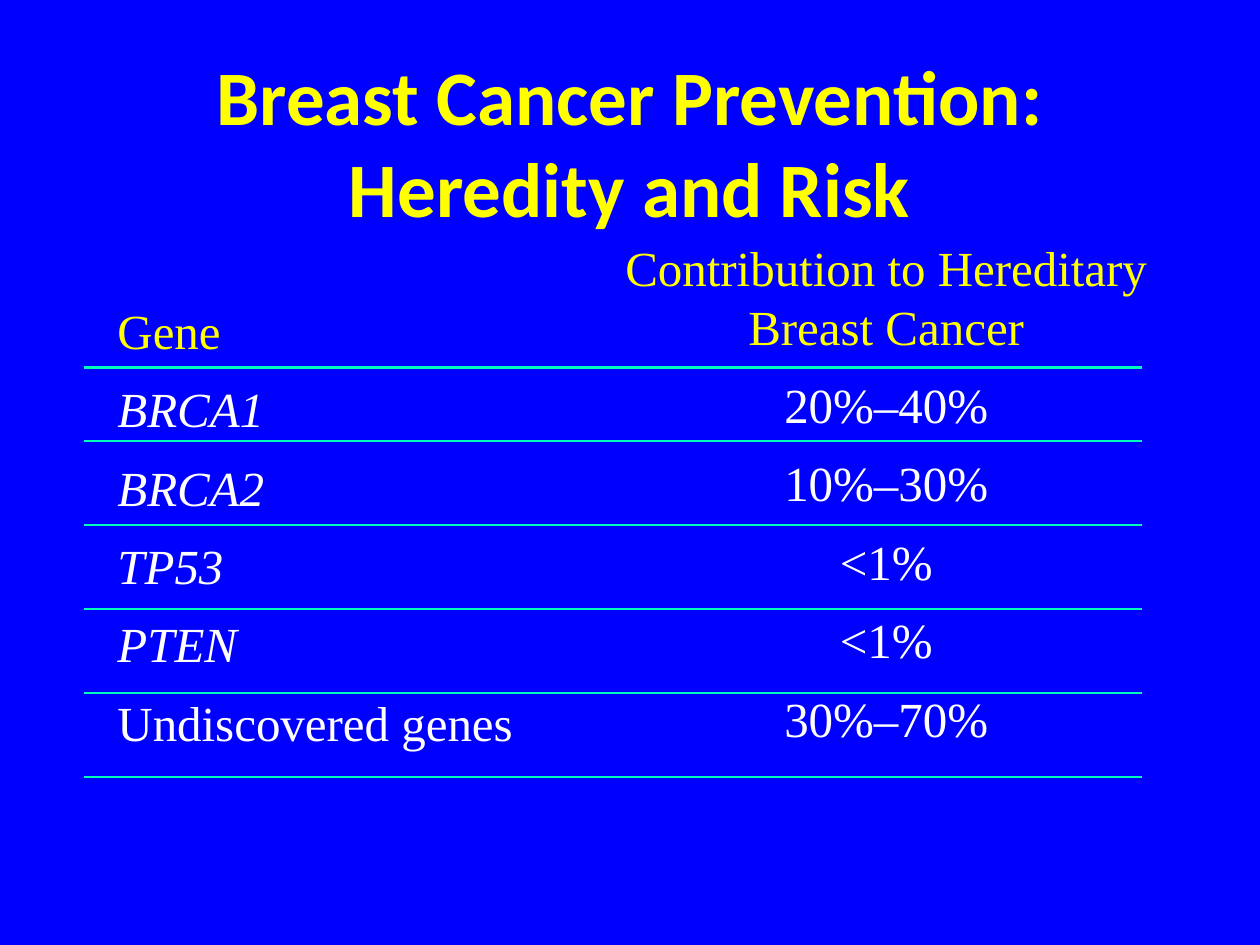
import pptx
import pptx.dml.color
import pptx.enum.shapes
import pptx.enum.text
import pptx.oxml
import pptx.oxml.ns
import pptx.util

BLUE = pptx.dml.color.RGBColor(0x00, 0x00, 0xFF)
YELLOW = pptx.dml.color.RGBColor(0xFF, 0xFF, 0x00)
WHITE = pptx.dml.color.RGBColor(0xFF, 0xFF, 0xFF)
MINT = pptx.dml.color.RGBColor(0x00, 0xFC, 0xBA)

ALIGN = pptx.enum.text.PP_ALIGN
FIT = pptx.enum.text.MSO_AUTO_SIZE
DRAWING = pptx.oxml.ns.nsdecls("a")

GENES = [
    ("BRCA1", "20%–40%", True),
    ("BRCA2", "10%–30%", True),
    ("TP53", "<1%", True),
    ("PTEN", "<1%", True),
    ("Undiscovered genes", "30%–70%", False),
]
RULE_ROWS = [17.5, *range(21, 38, 4)]


class SlideBuilder:
    """Places elements on a grid of 60 columns by 45 rows."""

    columns, rows = 60, 45
    title_font = {"name": "Calibri", "size": pptx.util.Pt(44), "bold": True}
    table_font = {"name": "Times New Roman", "size": pptx.util.Pt(28)}

    def __init__(self, deck):
        self.cell_width = deck.slide_width / self.columns
        self.cell_height = deck.slide_height / self.rows
        self.slide = deck.slides.add_slide(deck.slide_layouts[6])
        fill = self.slide.background.fill
        fill.solid()
        fill.fore_color.rgb = BLUE

    def across(self, columns):
        return round(columns * self.cell_width)

    def down(self, rows):
        return round(rows * self.cell_height)

    def text(self, left, top, width, height, lines, font, align=ALIGN.LEFT,
             wrap=True, fit=FIT.NONE, space_before=0):
        """Lines are (text, colour, italic); space_before is a percentage of a line."""
        box = self.slide.shapes.add_textbox(
            self.across(left), self.down(top), self.across(width), self.down(height))
        frame = box.text_frame
        frame.word_wrap = wrap
        frame.auto_size = fit
        for index, (words, colour, italic) in enumerate(lines):
            para = frame.add_paragraph() if index else frame.paragraphs[0]
            para.alignment = align
            if space_before:
                para._p.get_or_add_pPr().insert(0, pptx.oxml.parse_xml(
                    f'<a:spcBef {DRAWING}><a:spcPct val="{space_before * 1000}"/></a:spcBef>'))
            span = para.add_run()
            span.text = words
            for name, value in {**font, "italic": italic}.items():
                setattr(span.font, name, value)
            span.font.color.rgb = colour

    def rule(self, left, right, row):
        line = self.slide.shapes.add_connector(
            pptx.enum.shapes.MSO_CONNECTOR.STRAIGHT,
            self.across(left), self.down(row), self.across(right), self.down(row))
        line.line.color.rgb = MINT
        line.line.width = pptx.util.Pt(1.5)
        line._element.spPr.append(pptx.oxml.parse_xml(f"<a:effectLst {DRAWING}/>"))


def main():
    deck = pptx.Presentation()
    deck.slide_width = pptx.util.Inches(10)
    deck.slide_height = pptx.util.Inches(7.5)
    builder = SlideBuilder(deck)

    builder.text(4.5, 2, 51, 7.5,
                 [("Breast Cancer Prevention: Heredity and Risk", YELLOW, False)],
                 builder.title_font, ALIGN.CENTER)

    gene_lines = [("Gene", YELLOW, False)]
    share_lines = [("Contribution to Hereditary Breast Cancer", YELLOW, False)]
    for gene, share, italic in GENES:
        gene_lines.append((gene, WHITE, italic))
        share_lines.append((share, WHITE, False))
    column_style = {"font": builder.table_font, "fit": FIT.SHAPE_TO_FIT_TEXT,
                    "space_before": 40}
    builder.text(5, 14, 20.2, 23.2, gene_lines, wrap=False, **column_style)
    builder.text(27, 11, 30.4, 25.9, share_lines, align=ALIGN.CENTER, **column_style)

    for row in RULE_ROWS:
        builder.rule(4, 54.4, row)

    deck.save("out.pptx")


if __name__ == "__main__":
    main()
